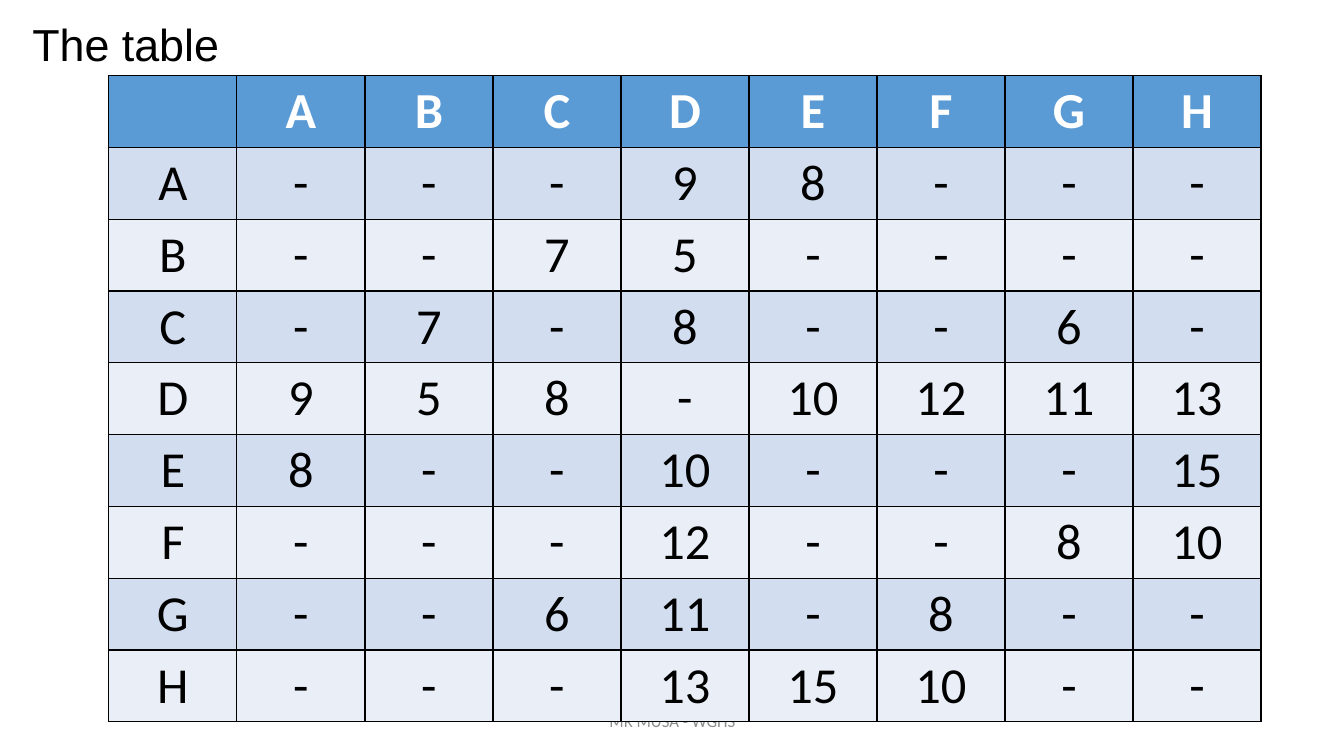
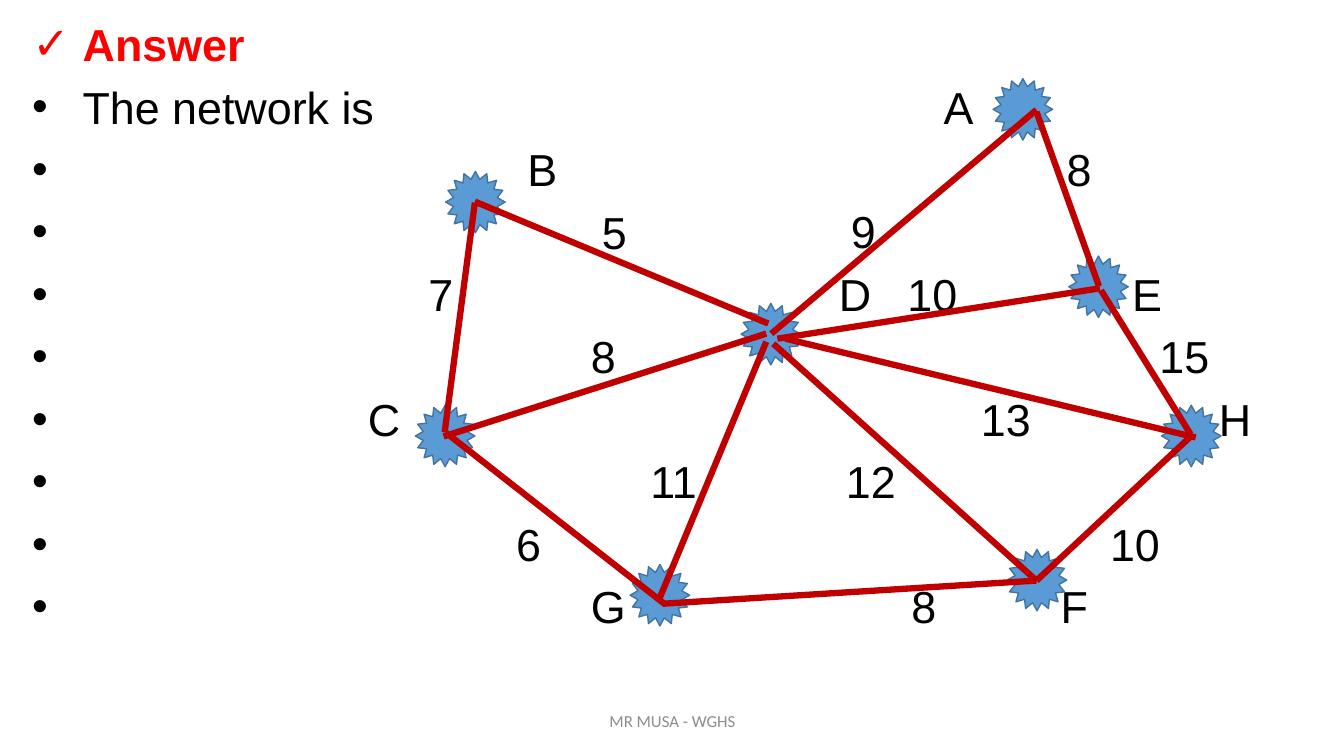
from dataclasses import dataclass

from lxml.etree import SubElement
from pptx import Presentation
from pptx.dml.color import RGBColor as Color
from pptx.enum.shapes import MSO_CONNECTOR as Connector, MSO_SHAPE as Shape
from pptx.enum.text import MSO_ANCHOR as Anchor, MSO_AUTO_SIZE as AutoSize, PP_ALIGN as Align
from pptx.oxml.ns import qn
from pptx.util import Inches, Pt


@dataclass(frozen=True)
class Theme:
    text_font: str = "Arial"
    table_font: str = "Calibri"
    text_size: float = 32
    table_size: float = 36
    footer_size: float = 12
    line_height: float = 34.6
    line_gap: float = 10
    black: str = "000000"
    white: str = "FFFFFF"
    answer: str = "FF0000"
    footer: str = "8C8C8C"
    accent: str = "5B9BD5"
    accent_edge: str = "43739E"
    bands: tuple = ("D2DEEF", "EAEFF7")
    link: str = "C00000"
    link_width: float = 4.5
    border_width: float = 1


@dataclass(frozen=True)
class Link:
    """A weighted link between two nodes and the ends of its line."""
    nodes: str
    weight: int
    start: tuple
    end: tuple


FOOTER = "MR MUSA - WGHS"
TEXT_LEFT, TEXT_TOP, TEXT_WIDTH = 0.32, 0.22, 12.76
STAR_WIDTH, STAR_HEIGHT = 0.59, 0.61

# Top left corner of each star
NODES = {
    "A": (9.85, 0.78), "B": (4.42, 1.7), "C": (4.12, 4.02), "D": (7.35, 3.01),
    "E": (10.6, 2.54), "F": (9.99, 5.45), "G": (6.25, 5.6), "H": (11.52, 4.02),
}

LINKS = [
    Link("AD", 9, (10.28, 1.09), (7.65, 3.31)),
    Link("BD", 5, (4.71, 2), (7.62, 3.21)),
    Link("DF", 12, (10.28, 5.76), (7.67, 3.41)),
    Link("DH", 13, (11.86, 4.34), (7.79, 3.36)),
    Link("FG", 8, (10.28, 5.76), (6.57, 5.99)),
    Link("BC", 7, (4.71, 2.01), (4.41, 4.29)),
    Link("DE", 10, (10.91, 2.86), (7.71, 3.36)),
    Link("CD", 8, (7.6, 3.31), (4.4, 4.33)),
    Link("DG", 11, (7.6, 3.39), (6.54, 5.94)),
    Link("CG", 6, (4.42, 4.29), (6.59, 5.99)),
    Link("FH", 10, (11.81, 4.33), (10.28, 5.76)),
    Link("AE", 8, (10.28, 1.11), (10.9, 2.84)),
    Link("EH", 15, (10.92, 2.88), (11.81, 4.31)),
]

# Each bulleted line: its texts and the column where each starts
LABEL_LINES = [
    [("The network is", 0.82), ("A", 9.36)],
    [("B", 5.23), ("8", 10.58)],
    [("5", 5.97), ("9", 8.44)],
    [("7", 4.25), ("D", 8.32), ("10", 9), ("E", 11.23)],
    [("8", 5.86), ("15", 11.5)],
    [("C", 3.65), ("13", 9.73), ("H", 12.09)],
    [("11", 6.45), ("12", 8.39)],
    [("6", 5.12), ("10", 11.01)],
    [("G", 5.86), ("8", 9.04), ("F", 10.52)],
]


class Pages:
    """Draws on the current slide; lengths are columns and rows of a one-inch grid."""

    def __init__(self, theme):
        self.theme = theme
        self.deck = Presentation()
        self.deck.slide_width, self.deck.slide_height = self.grid(13.33, 7.5)
        self.page = None

    @staticmethod
    def grid(*cells):
        return [Inches(cell) for cell in cells]

    def line_top(self, index):
        """Row where the given line of running text starts."""
        return TEXT_TOP + index * (self.theme.line_height + self.theme.line_gap) / 72

    def start(self, title, color, bold=False, bullet=None):
        self.page = self.deck.slides.add_slide(self.deck.slide_layouts[5])
        holder = self.page.shapes.title
        holder.left, holder.top, holder.width, holder.height = self.grid(
            TEXT_LEFT, TEXT_TOP, TEXT_WIDTH, 0.5)
        self.frame(holder.text_frame)
        para = holder.text_frame.paragraphs[0]
        para.text = title
        if bullet:
            self.bullet(para, bullet, 0.5, color)
        self.running_text(para, color, bold)
        self.footer()

    @staticmethod
    def frame(text_frame, anchor=Anchor.TOP):
        text_frame.word_wrap = True
        text_frame.auto_size = AutoSize.NONE
        text_frame.vertical_anchor = anchor
        text_frame.margin_left = text_frame.margin_right = 0
        text_frame.margin_top = text_frame.margin_bottom = 0

    @staticmethod
    def font(para, name, size, color, bold=False):
        para.font.name, para.font.size, para.font.bold = name, Pt(size), bold
        para.font.color.rgb = Color.from_string(color)

    def running_text(self, para, color, bold=False):
        para.alignment = Align.LEFT
        para.line_spacing = Pt(self.theme.line_height)
        para.space_before = Pt(0)
        para.space_after = Pt(self.theme.line_gap)
        self.font(para, self.theme.text_font, self.theme.text_size, color, bold)

    def bullet(self, para, mark, indent, color):
        """Hang the mark at the left edge and start the text at the indent."""
        props = para._p.get_or_add_pPr()
        props.set("marL", str(Inches(indent)))
        props.set("indent", str(-Inches(indent)))
        SubElement(SubElement(props, qn("a:buClr")), qn("a:srgbClr"), val=color)
        SubElement(props, qn("a:buFont"), typeface=self.theme.text_font)
        SubElement(props, qn("a:buChar"), char=mark)

    def text_box(self, left, top, width, height, anchor=Anchor.TOP):
        box = self.page.shapes.add_textbox(*self.grid(left, top, width, height))
        self.frame(box.text_frame, anchor)
        return box.text_frame

    def footer(self):
        para = self.text_box(4.42, 6.95, 4.5, 0.4, Anchor.MIDDLE).paragraphs[0]
        para.text, para.alignment = FOOTER, Align.CENTER
        self.font(para, self.theme.table_font, self.theme.footer_size, self.theme.footer)

    def label_lines(self, lines):
        """Bulleted lines; texts after the first of a line get boxes of their own."""
        body = self.text_box(TEXT_LEFT, self.line_top(1), TEXT_WIDTH,
                             self.line_top(len(lines)) - TEXT_TOP)
        for index, ((first, left), *others) in enumerate(lines):
            para = body.add_paragraph() if index else body.paragraphs[0]
            para.text = first
            self.bullet(para, "•", left - TEXT_LEFT, self.theme.black)
            self.running_text(para, self.theme.black)
            for text, column in others:
                label = self.text_box(column, self.line_top(index + 1), 0.6, 0.5)
                label.paragraphs[0].text = text
                self.running_text(label.paragraphs[0], self.theme.black)

    def star(self, left, top):
        star = self.page.shapes.add_shape(
            Shape.STAR_16_POINT, *self.grid(left, top, STAR_WIDTH, STAR_HEIGHT))
        star.shadow.inherit = False
        star.fill.solid()
        star.fill.fore_color.rgb = Color.from_string(self.theme.accent)
        star.line.color.rgb = Color.from_string(self.theme.accent_edge)
        star.line.width = Pt(1)

    def line(self, start, end):
        line = self.page.shapes.add_connector(Connector.STRAIGHT, *self.grid(*start, *end))
        line.line.color.rgb = Color.from_string(self.theme.link)
        line.line.width = Pt(self.theme.link_width)
        SubElement(line.element.spPr, qn("a:effectLst"))

    def table(self, rows, left, top, width, height):
        table = self.page.shapes.add_table(
            len(rows), len(rows[0]), *self.grid(left, top, width, height)).table
        table.horz_banding = False
        for row_index, row in enumerate(rows):
            header = row_index == 0
            fill = self.theme.accent if header else self.theme.bands[(row_index - 1) % 2]
            color = self.theme.white if header else self.theme.black
            for column_index, text in enumerate(row):
                self.cell(table.cell(row_index, column_index), text, fill, color, header)

    def cell(self, cell, text, fill, color, bold):
        props = cell._tc.get_or_add_tcPr()
        for side in ("lnL", "lnR", "lnT", "lnB"):
            border = SubElement(props, qn(f"a:{side}"), w=str(Pt(self.theme.border_width)))
            paint = SubElement(border, qn("a:solidFill"))
            SubElement(paint, qn("a:srgbClr"), val=self.theme.black)
        cell.fill.solid()
        cell.fill.fore_color.rgb = Color.from_string(fill)
        para = cell.text_frame.paragraphs[0]
        para.text, para.alignment = text, Align.CENTER
        self.font(para, self.theme.table_font, self.theme.table_size, color, bold)


def weight_rows():
    """Header and one row per node, with a dash where two nodes are not linked."""
    weights = {frozenset(link.nodes): str(link.weight) for link in LINKS}
    rows = [["", *NODES]]
    for node in NODES:
        rows.append([node, *(weights.get(frozenset((node, other)), "-") for other in NODES)])
    return rows


def main():
    theme = Theme()
    pages = Pages(theme)

    pages.start("The table", theme.black)
    pages.table(weight_rows(), 1.08, 0.75, 11.43, 6.3)

    pages.start("Answer", theme.answer, bold=True, bullet="✓")
    pages.label_lines(LABEL_LINES)
    for corner in NODES.values():
        pages.star(*corner)
    for link in LINKS:
        pages.line(link.start, link.end)

    pages.deck.save("out.pptx")


if __name__ == "__main__":
    main()
